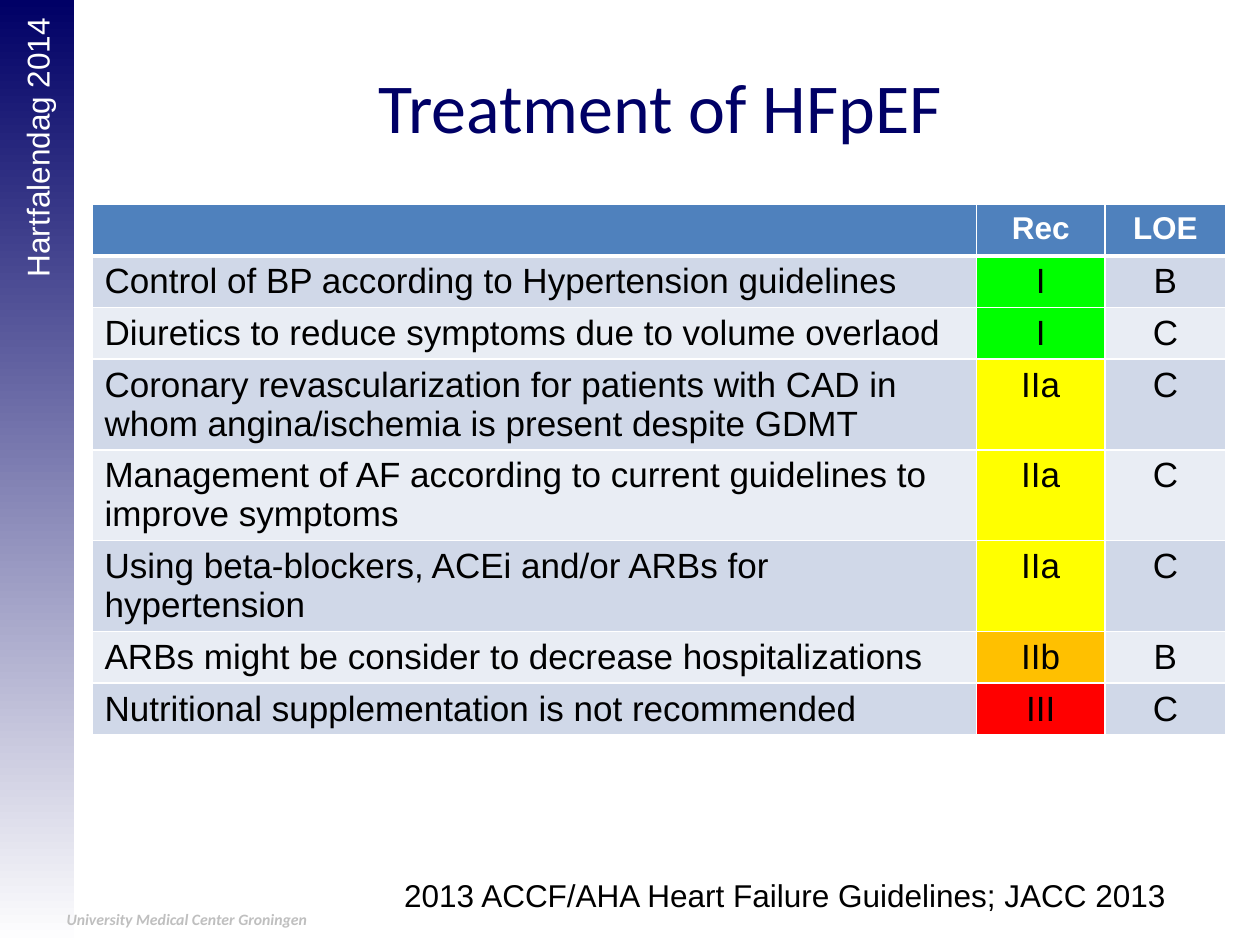
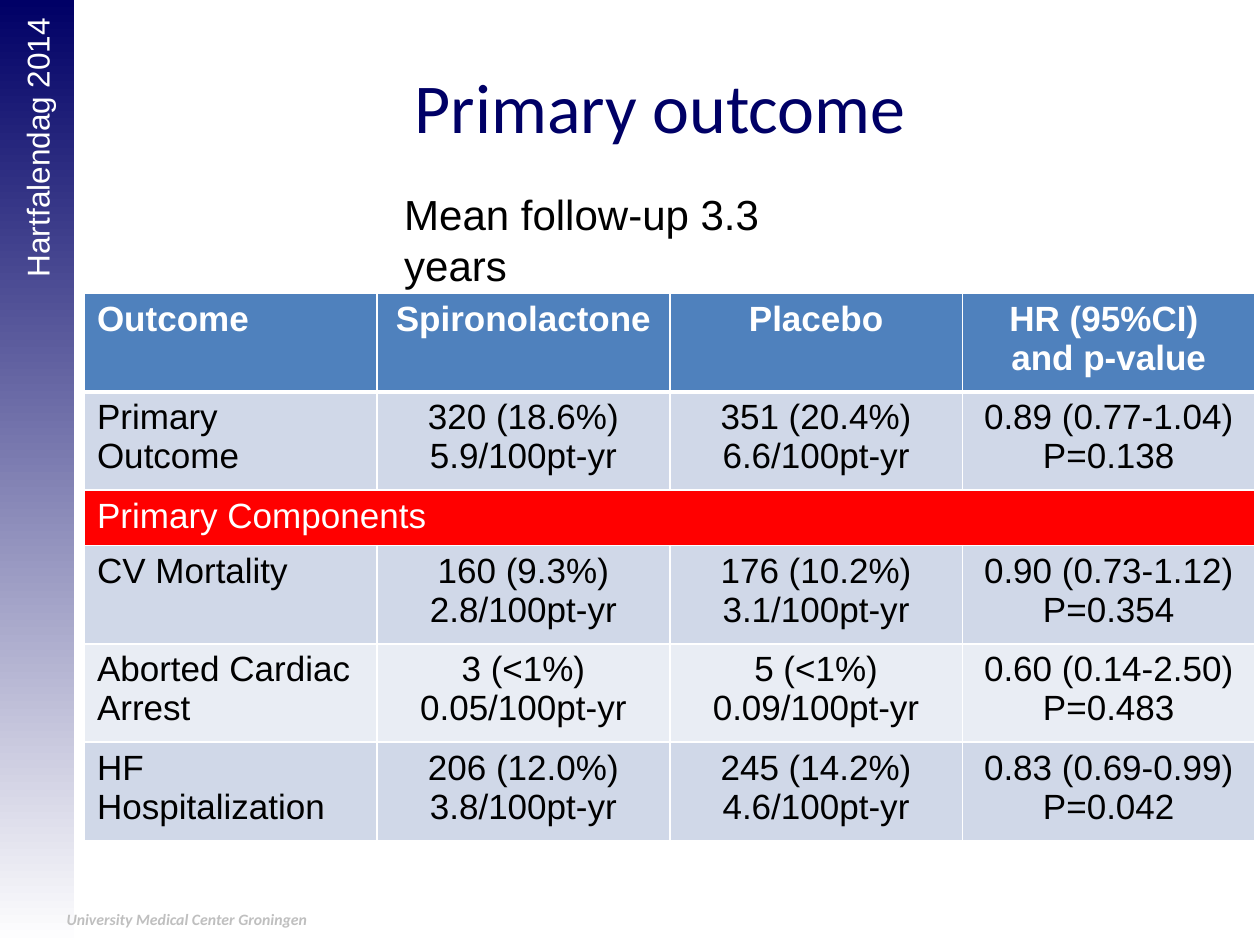
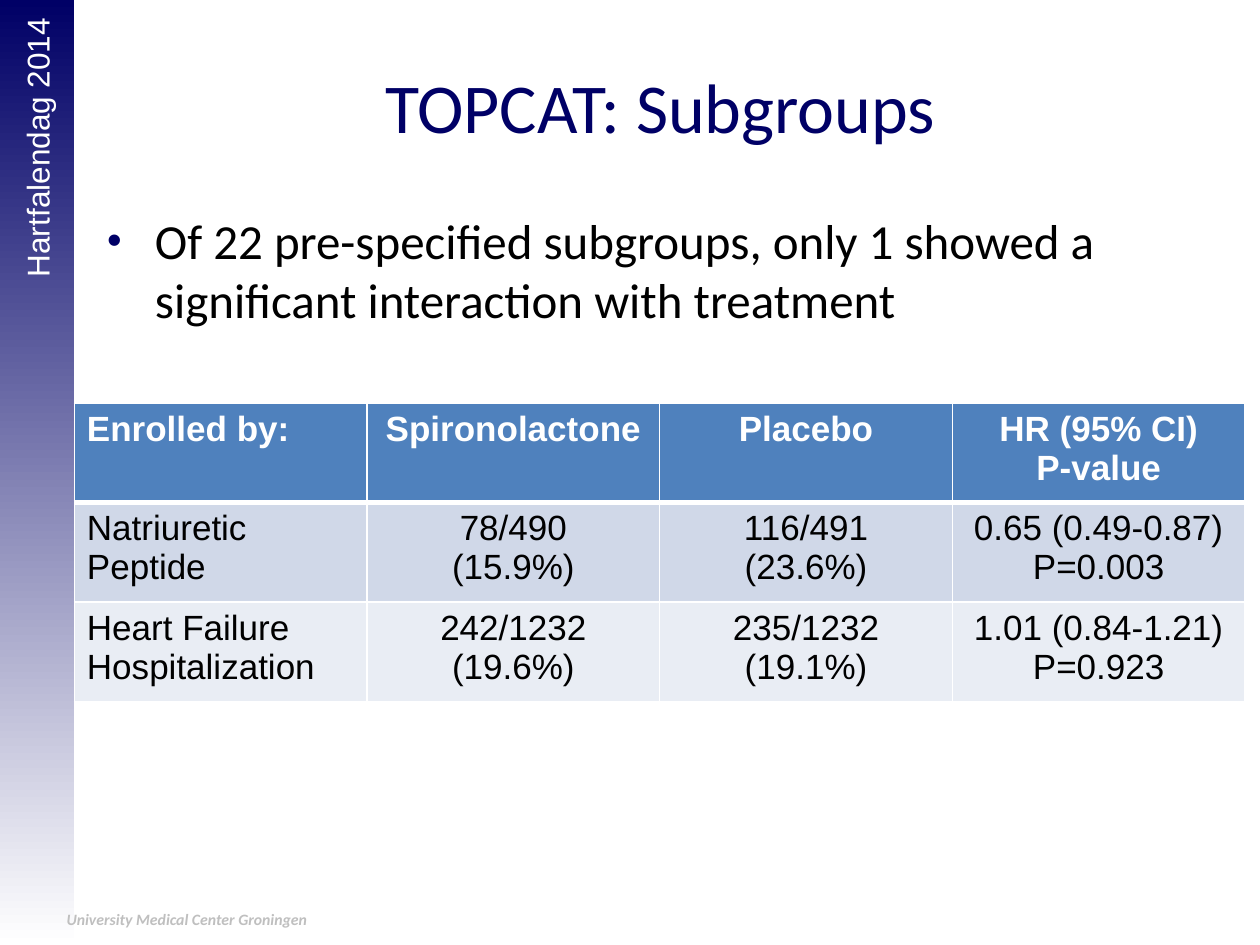
from dataclasses import dataclass
from typing import Optional

from lxml.etree import SubElement
from pptx import Presentation
from pptx.dml.color import RGBColor
from pptx.enum.shapes import MSO_SHAPE as Preset
from pptx.enum.text import MSO_ANCHOR as Anchor, PP_ALIGN as Align
from pptx.oxml.ns import qn
from pptx.util import Emu, Inches, Pt


@dataclass(frozen=True)
class Theme:
    navy: str = "000066"
    white: str = "FFFFFF"
    black: str = "000000"
    grey: str = "BFBFBF"
    header: str = "4F81BD"
    stripes: tuple[str, str] = ("E9EDF4", "D0D8E8")
    section: str = "FF0000"
    sans: str = "Arial"
    heading: str = "Calibri"
    title_size: int = 40
    bullet_size: int = 28
    remark_size: int = 24
    cell_size: int = 20
    label_size: int = 18
    footer_size: int = 9
    thin: int = 1
    thick: int = 3


@dataclass(frozen=True)
class TextStyle:
    size: int
    font: str
    color: str
    bold: bool = False
    italic: bool = False
    align: Align = Align.LEFT


@dataclass(frozen=True)
class Area:
    """Percentages of the slide's width and height."""
    left: float
    top: float
    width: float
    height: float

    def frame(self) -> tuple[Emu, Emu, Emu, Emu]:
        return across(self.left), down(self.top), across(self.width), down(self.height)


@dataclass(frozen=True)
class Grid:
    left: float
    top: float
    columns: tuple[float, ...]
    heights: tuple[float, ...]
    rows: tuple[tuple[str, ...], ...]
    header_size: int


@dataclass(frozen=True)
class Remark:
    text: str
    area: Area
    size: int


@dataclass(frozen=True)
class Page:
    title: str
    grid: Grid
    remark: Optional[Remark] = None
    bullet: Optional[str] = None


THEME = Theme()
SLIDE_WIDTH, SLIDE_HEIGHT = Inches(10), Inches(7.5)
TITLE_ONLY, TITLE_AND_BODY = 5, 1
TITLE_AREA = Area(7.5, 2.8, 89.8, 16.67)
BODY_AREA = Area(7.5, 21.6, 89.8, 66)
BAND_AREA = Area(0, 0, 5.9, 100)
EVENT_AREA = Area(-33.3, 46.27, 72.5, 5.33)
FOOTER_AREA = Area(4.3, 95.6, 60.7, 6.93)
GRADE_FILLS = {"I": "00FF00", "IIa": "FFFF00", "IIb": "FFC000", "III": "FF0000"}
OUTCOME_COLUMNS = (23.23,) * 4

PAGES = (
    Page(
        "Treatment of HFpEF",
        Grid(
            7.3, 21.6, (70.2, 10.2, 9.6), (5.47,) * 8,
            (
                ("", "Rec", "LOE"),
                ("Control of BP according to Hypertension guidelines", "I", "B"),
                ("Diuretics to reduce symptoms due to volume overlaod", "I", "C"),
                ("Coronary revascularization for patients with CAD in whom "
                 "angina/ischemia is present despite GDMT", "IIa", "C"),
                ("Management of AF according to current guidelines to improve symptoms",
                 "IIa", "C"),
                ("Using beta-blockers, ACEi and/or ARBs for hypertension", "IIa", "C"),
                ("ARBs might be consider to decrease hospitalizations", "IIb", "B"),
                ("Nutritional supplementation is not recommended", "III", "C"),
            ),
            THEME.label_size,
        ),
        remark=Remark("2013 ACCF/AHA Heart Failure Guidelines; JACC 2013",
                      Area(31.1, 92, 63, 5.33), THEME.label_size),
    ),
    Page(
        "Primary outcome",
        Grid(
            6.7, 31.07, OUTCOME_COLUMNS, (10.4, 10.4, 5.87, 10.4, 10.4, 10.4),
            (
                ("Outcome", "Spironolactone", "Placebo", "HR (95%CI) \nand p-value"),
                ("Primary Outcome", "320 (18.6%)\n5.9/100pt-yr",
                 "351 (20.4%)\n6.6/100pt-yr", "0.89 (0.77-1.04)\nP=0.138"),
                ("Primary Components",),
                ("CV Mortality", "160 (9.3%)\n2.8/100pt-yr",
                 "176 (10.2%)\n3.1/100pt-yr", "0.90 (0.73-1.12)\nP=0.354"),
                ("Aborted Cardiac Arrest", "3 (<1%)\n0.05/100pt-yr",
                 "5 (<1%)\n0.09/100pt-yr", "0.60 (0.14-2.50)\nP=0.483"),
                ("HF Hospitalization", "206 (12.0%)\n3.8/100pt-yr",
                 "245 (14.2%)\n4.6/100pt-yr", "0.83 (0.69-0.99)\nP=0.042"),
            ),
            THEME.cell_size,
        ),
        remark=Remark("Mean follow-up 3.3 years", Area(31.1, 19.33, 36.7, 6.67),
                      THEME.remark_size),
    ),
    Page(
        "TOPCAT: Subgroups",
        Grid(
            5.9, 42.67, OUTCOME_COLUMNS, (10.53,) * 3,
            (
                ("Enrolled by:", "Spironolactone", "Placebo", "HR (95% CI)\nP-value"),
                ("Natriuretic\nPeptide", "78/490\n(15.9%)", "116/491\n(23.6%)",
                 "0.65 (0.49-0.87)\nP=0.003"),
                ("Heart Failure Hospitalization", "242/1232\n(19.6%)",
                 "235/1232\n(19.1%)", "1.01 (0.84-1.21)\nP=0.923"),
            ),
            THEME.cell_size,
        ),
        bullet="Of 22 pre-specified subgroups, only 1 showed a significant "
               "interaction with treatment",
    ),
)


def across(percent: float) -> Emu:
    return Emu(round(SLIDE_WIDTH * percent / 100))


def down(percent: float) -> Emu:
    return Emu(round(SLIDE_HEIGHT * percent / 100))


def rgb(color: str) -> RGBColor:
    return RGBColor.from_string(color)


def write(frame, text: str, style: TextStyle) -> None:
    for index, line in enumerate(text.split("\n")):
        para = frame.add_paragraph() if index else frame.paragraphs[0]
        para.alignment = style.align
        span = para.add_run()
        span.text = line
        font = span.font
        font.name, font.size = style.font, Pt(style.size)
        font.bold, font.italic = style.bold, style.italic
        font.color.rgb = rgb(style.color)


def add_text(slide, area: Area, text: str, style: TextStyle):
    box = slide.shapes.add_textbox(*area.frame())
    box.text_frame.word_wrap = True
    write(box.text_frame, text, style)
    return box


def place(holder, area: Area) -> None:
    holder.left, holder.top, holder.width, holder.height = area.frame()


def add_master_parts(deck, slide) -> None:
    band = slide.shapes.add_shape(Preset.RECTANGLE, *BAND_AREA.frame())
    band.shadow.inherit = False
    band.line.fill.background()
    band.fill.gradient()
    band.fill.gradient_angle = 270
    for stop, color in zip(band.fill.gradient_stops, (THEME.navy, THEME.white)):
        stop.color.rgb = rgb(color)
    event = add_text(slide, EVENT_AREA, "Hartfalendag 2014",
                     TextStyle(THEME.label_size, THEME.sans, THEME.white, align=Align.RIGHT))
    event.rotation = 270
    footer = add_text(slide, FOOTER_AREA, "University Medical Center Groningen",
                      TextStyle(THEME.footer_size, THEME.heading, THEME.grey,
                                bold=True, italic=True))
    master_tree = deck.slide_master.shapes.element
    for number, part in enumerate((band, event, footer), start=101):
        part.element.xpath(".//p:cNvPr")[0].set("id", str(number))
        master_tree.append(part.element)


def add_title(slide, text: str) -> None:
    title = slide.shapes.title
    place(title, TITLE_AREA)
    title.text_frame.vertical_anchor = Anchor.MIDDLE
    write(title.text_frame, text,
          TextStyle(THEME.title_size, THEME.heading, THEME.navy, align=Align.CENTER))


def add_bullet(slide, text: str) -> None:
    body = slide.placeholders[1]
    place(body, BODY_AREA)
    para = body.text_frame.paragraphs[0]
    para.space_before = Pt(0)
    properties = para._p.get_or_add_pPr()
    properties.set("marL", str(Inches(0.38)))
    properties.set("indent", str(-Inches(0.38)))
    SubElement(SubElement(properties, qn("a:buClr")), qn("a:srgbClr"), val=THEME.navy)
    SubElement(properties, qn("a:buSzPct"), val="85000")
    SubElement(properties, qn("a:buFont"), typeface=THEME.sans)
    SubElement(properties, qn("a:buChar"), char="•")
    write(body.text_frame, text,
          TextStyle(THEME.bullet_size, THEME.heading, THEME.black))


def set_borders(cell, is_header: bool) -> None:
    widths = {"a:lnL": THEME.thin, "a:lnR": THEME.thin}
    if is_header:
        widths["a:lnT"] = THEME.thin
    widths["a:lnB"] = THEME.thick if is_header else THEME.thin
    properties = cell._tc.get_or_add_tcPr()
    for index, (side, width) in enumerate(widths.items()):
        line = SubElement(properties, qn(side), w=str(Pt(width)))
        SubElement(SubElement(line, qn("a:solidFill")), qn("a:srgbClr"), val=THEME.white)
        properties.insert(index, line)


def add_grid(slide, grid: Grid) -> None:
    area = Area(grid.left, grid.top, sum(grid.columns), sum(grid.heights))
    table = slide.shapes.add_table(len(grid.rows), len(grid.columns), *area.frame()).table
    for column, width in zip(table.columns, grid.columns):
        column.width = across(width)
    for row_index, (texts, height) in enumerate(zip(grid.rows, grid.heights)):
        table.rows[row_index].height = down(height)
        is_header = row_index == 0
        is_section = len(texts) == 1
        if is_section:
            table.cell(row_index, 0).merge(table.cell(row_index, len(grid.columns) - 1))
        row_fill = (THEME.header if is_header else
                    THEME.section if is_section else THEME.stripes[row_index % 2])
        for column_index, text in enumerate(texts):
            cell = table.cell(row_index, column_index)
            cell.fill.solid()
            cell.fill.fore_color.rgb = rgb(GRADE_FILLS.get(text, row_fill))
            set_borders(cell, is_header)
            if text:
                write(cell.text_frame, text, TextStyle(
                    grid.header_size if is_header else THEME.cell_size,
                    THEME.sans,
                    THEME.white if is_header or is_section else THEME.black,
                    bold=is_header,
                    align=Align.CENTER if column_index else Align.LEFT,
                ))


def add_page(deck, page: Page):
    layout = TITLE_AND_BODY if page.bullet else TITLE_ONLY
    slide = deck.slides.add_slide(deck.slide_layouts[layout])
    add_title(slide, page.title)
    if page.bullet:
        add_bullet(slide, page.bullet)
    add_grid(slide, page.grid)
    if page.remark:
        add_text(slide, page.remark.area, page.remark.text,
                 TextStyle(page.remark.size, THEME.sans, THEME.black))
    return slide


def main() -> None:
    deck = Presentation()
    deck.slide_width, deck.slide_height = SLIDE_WIDTH, SLIDE_HEIGHT
    slides = [add_page(deck, page) for page in PAGES]
    add_master_parts(deck, slides[0])
    deck.save("out.pptx")


if __name__ == "__main__":
    main()
